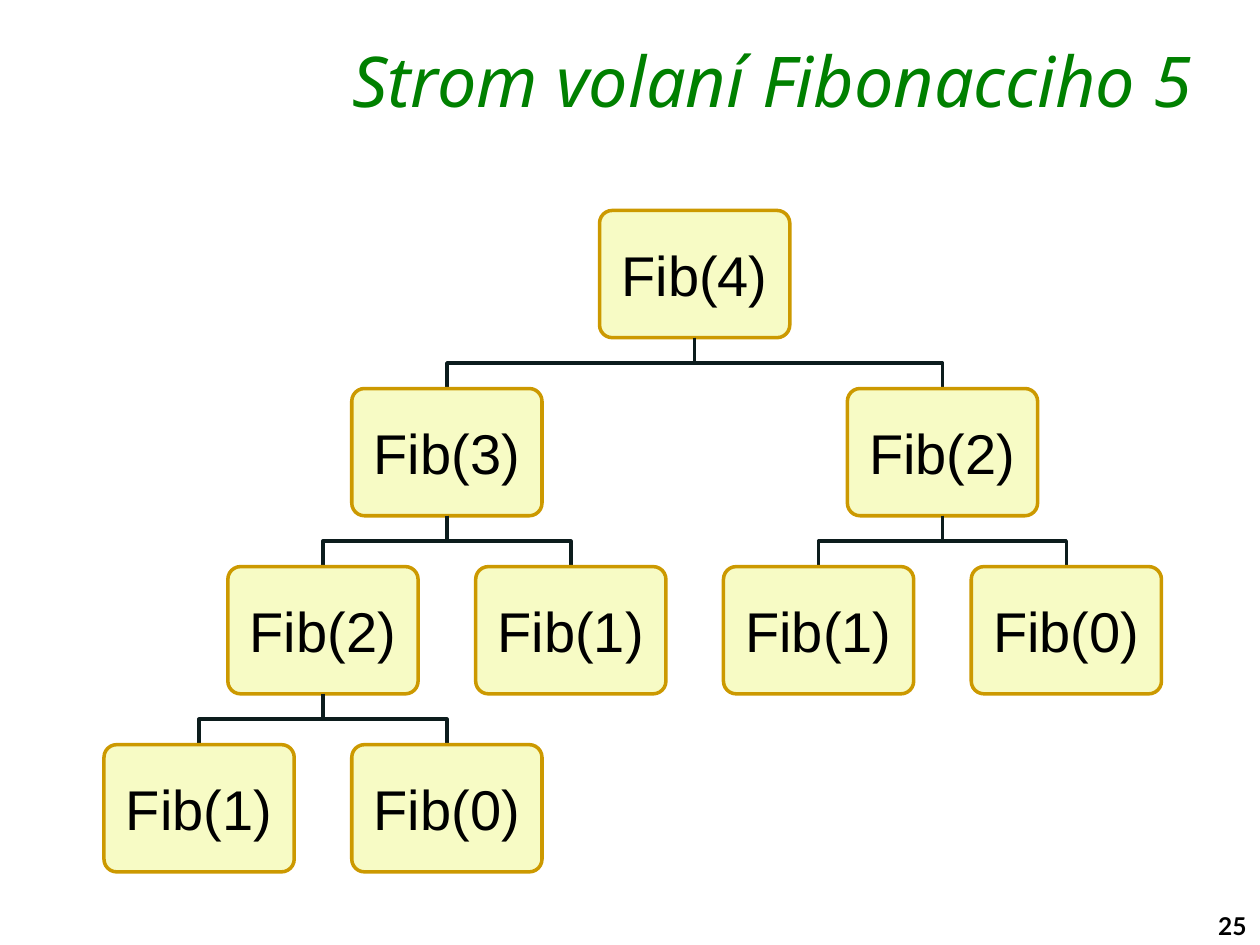
from pptx import Presentation
from pptx.dml.color import RGBColor
from pptx.enum.shapes import MSO_SHAPE
from pptx.enum.text import MSO_ANCHOR, PP_ALIGN
from pptx.util import Inches, Pt

ROUNDED = MSO_SHAPE.ROUNDED_RECTANGLE
MIDDLE, TOP = MSO_ANCHOR.MIDDLE, MSO_ANCHOR.TOP
CENTER, RIGHT = PP_ALIGN.CENTER, PP_ALIGN.RIGHT

GREEN = RGBColor(0x00, 0x80, 0x00)
BLACK = RGBColor(0x00, 0x00, 0x00)
CREAM = RGBColor(0xF7, 0xFB, 0xC5)
GOLD = RGBColor(0xCC, 0x99, 0x00)
DARK = RGBColor(0x0C, 0x1C, 0x1D)

# Tree grid: node centres sit on half-steps, one row per call depth
BOX_WIDTH, BOX_HEIGHT = Inches(1.51), Inches(1.01)
FIRST_CENTER, FIRST_TOP = Inches(1.58), Inches(1.67)
COLUMN_STEP = (Inches(7.48) - FIRST_CENTER) // 6
ROW_STEP = (Inches(5.91) - FIRST_TOP) // 3

# Argument, column, row, column of the calling node
CALLS = [
    (4, 4, 0, None),
    (3, 2, 1, 4),
    (2, 1, 2, 2),
    (1, 0, 3, 1),
    (0, 2, 3, 1),
    (1, 3, 2, 2),
    (2, 6, 1, 4),
    (1, 5, 2, 6),
    (0, 7, 2, 6),
]

presentation = Presentation()
presentation.slide_width, presentation.slide_height = Inches(10), Inches(7.5)
slide = presentation.slides.add_slide(presentation.slide_layouts[5])

title = slide.shapes.title
title.left, title.top = Inches(2.01), Inches(0.28)
title.width, title.height = Inches(7.55), Inches(0.58)
frame = title.text_frame
frame.text = "Strom volaní Fibonacciho 5"
frame.vertical_anchor = TOP
frame.margin_top = Inches(0.02)
paragraph = frame.paragraphs[0]
paragraph.alignment = RIGHT
font = paragraph.font
font.name, font.size, font.italic = "Noto Sans", Pt(40), True
font.color.rgb = GREEN

for argument, column, row, caller_column in CALLS:
    center = FIRST_CENTER + column * COLUMN_STEP
    top = FIRST_TOP + row * ROW_STEP

    if caller_column is not None:
        caller_center = FIRST_CENTER + caller_column * COLUMN_STEP
        caller_bottom = top - ROW_STEP + BOX_HEIGHT
        bend = (caller_bottom + top) // 2
        builder = slide.shapes.build_freeform(caller_center, caller_bottom)
        builder.add_line_segments(
            [(caller_center, bend), (center, bend), (center, top)], close=False
        )
        branch = builder.convert_to_shape()
        branch.shadow.inherit = False
        branch.fill.background()
        branch.line.color.rgb = DARK
        branch.line.width = Pt(2)

    box = slide.shapes.add_shape(
        ROUNDED, center - BOX_WIDTH // 2, top, BOX_WIDTH, BOX_HEIGHT
    )
    box.adjustments[0] = 0.1
    box.shadow.inherit = False
    box.fill.solid()
    box.fill.fore_color.rgb = CREAM
    box.line.color.rgb = GOLD
    box.line.width = Pt(2)
    frame = box.text_frame
    frame.text = f"Fib({argument})"
    frame.word_wrap = False
    frame.vertical_anchor = MIDDLE
    paragraph = frame.paragraphs[0]
    paragraph.alignment = CENTER
    font = paragraph.font
    font.name, font.size = "Arial", Pt(32)
    font.color.rgb = BLACK

page_number = slide.shapes.add_textbox(
    Inches(9.57), Inches(7.18), Inches(0.51), Inches(0.33)
)
page_number.text_frame.text = "25"
font = page_number.text_frame.paragraphs[0].font
font.name, font.size, font.bold = "Lato", Pt(14), True
font.color.rgb = BLACK

presentation.save("out.pptx")
